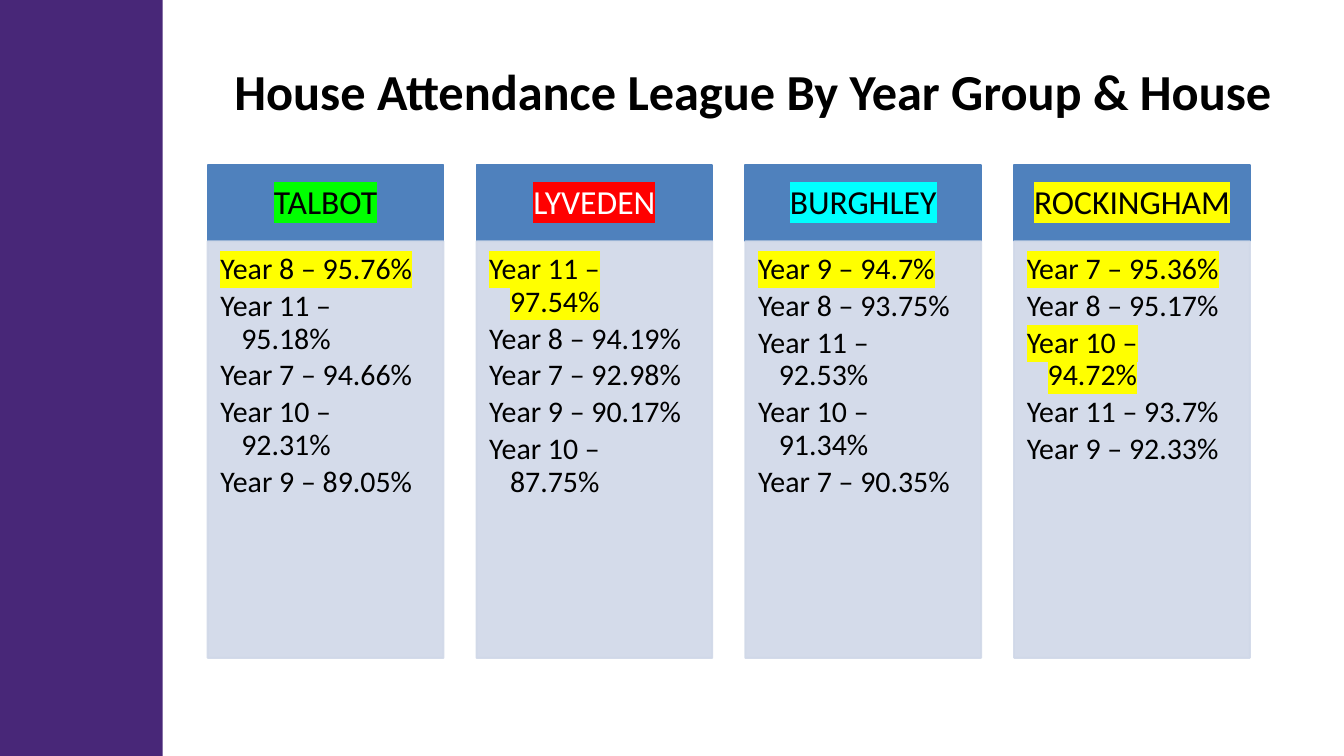
import pptx
import pptx.dml.color
import pptx.enum.shapes
import pptx.enum.text
import pptx.oxml.ns
import pptx.oxml.xmlchemy
import pptx.util
from pptx.dml.color import RGBColor
from pptx.util import Inches

PURPLE = RGBColor(0x48, 0x27, 0x78)
BLUE = RGBColor(0x4F, 0x81, 0xBD)
PALE_BLUE = RGBColor(0xD0, 0xD8, 0xE8)
BLACK = RGBColor(0x00, 0x00, 0x00)
WHITE = RGBColor(0xFF, 0xFF, 0xFF)
GREEN = RGBColor(0x00, 0xFF, 0x00)
RED = RGBColor(0xFF, 0x00, 0x00)
CYAN = RGBColor(0x00, 0xFF, 0xFF)
YELLOW = RGBColor(0xFF, 0xFF, 0x00)

# House, text colour, highlight, year results, highlighted rows
HOUSES = [
    ("TALBOT", BLACK, GREEN,
     ["Year 8 – 95.76%", "Year 11 – 95.18%", "Year 7 – 94.66%",
      "Year 10 – 92.31%", "Year 9 – 89.05%"], {0}),
    ("LYVEDEN", WHITE, RED,
     ["Year 11 – 97.54%", "Year 8 – 94.19%", "Year 7 – 92.98%",
      "Year 9 – 90.17%", "Year 10 – 87.75%"], {0}),
    ("BURGHLEY", BLACK, CYAN,
     ["Year 9 – 94.7%", "Year 8 – 93.75%", "Year 11 – 92.53%",
      "Year 10 – 91.34%", "Year 7 – 90.35%"], {0}),
    ("ROCKINGHAM", BLACK, YELLOW,
     ["Year 7 – 95.36%", "Year 8 – 95.17%", "Year 10 – 94.72%",
      "Year 11 – 93.7%", "Year 9 – 92.33%"], {0, 2}),
]

presentation = pptx.Presentation()
presentation.slide_width = Inches(20)
presentation.slide_height = Inches(11.25)
slide = presentation.slides.add_slide(presentation.slide_layouts[6])


def add_panel(left, top, width, height, color, margins, opacity=100):
    """Add a filled rectangle; margins are left, top, right, bottom."""
    shape = slide.shapes.add_shape(
        pptx.enum.shapes.MSO_SHAPE.RECTANGLE,
        Inches(left), Inches(top), Inches(width), Inches(height))
    shape.shadow.inherit = False
    shape.fill.solid()
    shape.fill.fore_color.rgb = color
    shape.line.color.rgb = color
    shape.line.width = pptx.util.Pt(2)
    if opacity < 100:
        for color_element in shape.element.spPr.iter(pptx.oxml.ns.qn("a:srgbClr")):
            alpha = pptx.oxml.xmlchemy.OxmlElement("a:alpha")
            alpha.set("val", str(opacity * 1000))
            color_element.append(alpha)
    frame = shape.text_frame
    frame.word_wrap = True
    (frame.margin_left, frame.margin_top,
     frame.margin_right, frame.margin_bottom) = map(Inches, margins)
    return shape


def format_text(paragraph, size, color, highlight=None):
    """Style the only run of a paragraph, with an optional highlight."""
    run = paragraph.runs[0]
    run.font.name = "Calibri"
    run.font.size = pptx.util.Pt(size)
    run.font.color.rgb = color
    if highlight is not None:
        highlight_element = pptx.oxml.xmlchemy.OxmlElement("a:highlight")
        color_element = pptx.oxml.xmlchemy.OxmlElement("a:srgbClr")
        color_element.set("val", str(highlight))
        highlight_element.append(color_element)
        properties = run._r.get_or_add_rPr()
        properties.find(pptx.oxml.ns.qn("a:solidFill")).addnext(highlight_element)


# Side band
band = add_panel(0, 0, 2.42, 11.25, PURPLE, (0, 0, 0, 0))
band.line.fill.background()

# Title
title = slide.shapes.add_textbox(Inches(2.67), Inches(0.37), Inches(17.08), Inches(1.96))
title.text_frame.word_wrap = True
title.text_frame.vertical_anchor = pptx.enum.text.MSO_ANCHOR.MIDDLE
title.text_frame.text = "House Attendance League By Year Group & House"
paragraph = title.text_frame.paragraphs[0]
paragraph.alignment = pptx.enum.text.PP_ALIGN.CENTER
format_text(paragraph, 54, BLACK)
paragraph.runs[0].font.bold = True

# One column per house
for column, (house, text_color, house_color, results, highlighted) in enumerate(HOUSES):
    left = 3.09 + column * 4

    # House heading
    header = add_panel(left, 2.46, 3.51, 1.13, BLUE, (0.28, 0.16, 0.28, 0.16))
    header.text_frame.vertical_anchor = pptx.enum.text.MSO_ANCHOR.MIDDLE
    header.text_frame.text = house
    paragraph = header.text_frame.paragraphs[0]
    paragraph.alignment = pptx.enum.text.PP_ALIGN.CENTER
    paragraph.line_spacing = 0.9
    format_text(paragraph, 36, text_color, house_color)

    # Year group results
    body = add_panel(left, 3.59, 3.51, 6.2, PALE_BLUE, (0.19, 0.19, 0.25, 0.28), 90)
    body.text_frame.vertical_anchor = pptx.enum.text.MSO_ANCHOR.TOP
    body.text_frame.text = "\n".join(results)
    for row, paragraph in enumerate(body.text_frame.paragraphs):
        paragraph.alignment = pptx.enum.text.PP_ALIGN.LEFT
        paragraph.level = 1
        paragraph.line_spacing = 0.9
        paragraph.space_after = pptx.util.Pt(5)
        properties = paragraph._p.get_or_add_pPr()
        properties.set("marL", str(Inches(0.31)))
        properties.set("indent", str(-Inches(0.31)))
        format_text(paragraph, 32, BLACK, YELLOW if row in highlighted else None)

presentation.save("out.pptx")
